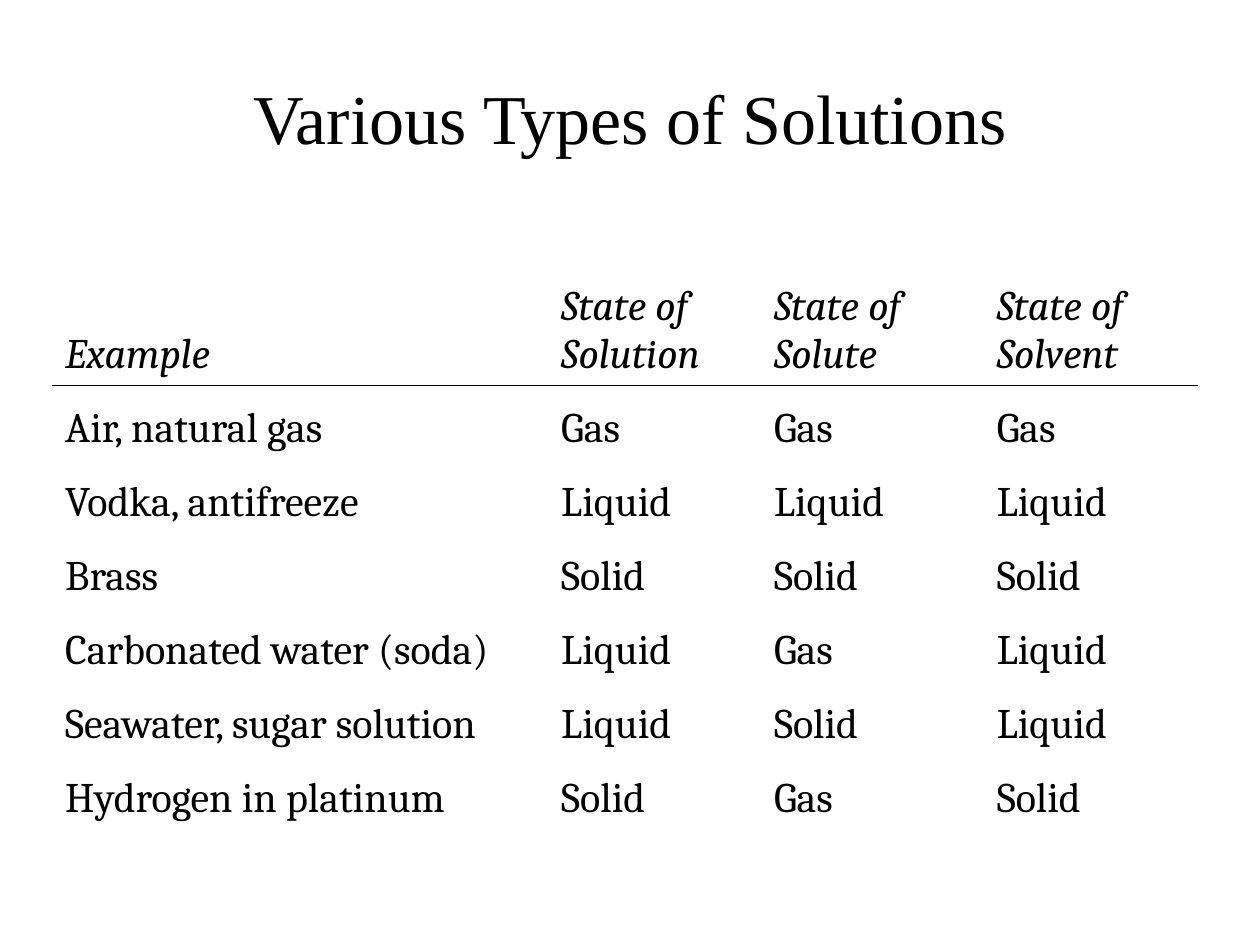
import pptx
import pptx.dml.color
import pptx.enum.text
import pptx.oxml
import pptx.oxml.ns
import pptx.util

Cm = pptx.util.Cm
Pt = pptx.util.Pt
ANCHOR = pptx.enum.text.MSO_ANCHOR
ALIGN = pptx.enum.text.PP_ALIGN

COLORS = {"text": "000000", "rule": "000000"}

SOLUTIONS = [
    ["Example", "State of Solution", "State of Solute", "State of Solvent"],
    ["Air, natural gas", "Gas", "Gas", "Gas"],
    ["Vodka, antifreeze", "Liquid", "Liquid", "Liquid"],
    ["Brass", "Solid", "Solid", "Solid"],
    ["Carbonated water (soda)", "Liquid", "Gas", "Liquid"],
    ["Seawater, sugar solution", "Liquid", "Solid", "Liquid"],
    ["Hydrogen in platinum", "Solid", "Gas", "Solid"],
]


class SlideBuilder:
    title_font = "Times New Roman"
    table_font = "Cambria"
    title_size = 40
    table_size = 24
    rule_width = 1

    def __init__(self, s):
        self.s = s

    def format_runs(self, tf, font, size, italic=False):
        for p in tf.paragraphs:
            for r in p.runs:
                r.font.name = font
                r.font.size = Pt(size)
                r.font.bold = False
                r.font.italic = italic
                r.font.color.rgb = pptx.dml.color.RGBColor.from_string(COLORS["text"])

    def title(self, text, left, top, width, height):
        sp = self.s.shapes.add_textbox(Cm(left), Cm(top), Cm(width), Cm(height))
        tf = sp.text_frame
        tf.word_wrap = True
        tf.vertical_anchor = ANCHOR.MIDDLE
        tf.text = text
        tf.paragraphs[0].alignment = ALIGN.CENTER
        self.format_runs(tf, self.title_font, self.title_size)

    def rule(self, cell, edge):
        ln = pptx.oxml.parse_xml(
            f'<a:{edge} {pptx.oxml.ns.nsdecls("a")} w="{Pt(self.rule_width)}">'
            f'<a:solidFill><a:srgbClr val="{COLORS["rule"]}"/></a:solidFill></a:{edge}>'
        )
        cell._tc.get_or_add_tcPr().insert(0, ln)

    def table(self, rows, left, top, widths, heights):
        frame = self.s.shapes.add_table(
            len(rows), len(widths), Cm(left), Cm(top), Cm(sum(widths)), Cm(sum(heights))
        )
        table = frame.table
        table.first_row = False
        table.horz_banding = False
        for column, width in zip(table.columns, widths):
            column.width = Cm(width)
        for row, height in zip(table.rows, heights):
            row.height = Cm(height)
        for i, values in enumerate(rows):
            for j, value in enumerate(values):
                cell = table.cell(i, j)
                cell.text_frame.text = value
                cell.vertical_anchor = ANCHOR.BOTTOM
                cell.fill.background()
                self.format_runs(cell.text_frame, self.table_font, self.table_size, i == 0)
                if i < 2:
                    self.rule(cell, "lnB" if i == 0 else "lnT")


def main():
    prs = pptx.Presentation()
    prs.slide_width = Cm(25.4)
    prs.slide_height = Cm(19.05)
    builder = SlideBuilder(prs.slides.add_slide(prs.slide_layouts[6]))
    builder.title("Various Types of Solutions", 1.27, 0.76, 22.86, 3.18)
    row_heights = [2.69] + [1.49] * (len(SOLUTIONS) - 1)
    builder.table(SOLUTIONS, 1.06, 5.08, [10, 4.29, 4.49, 4.29], row_heights)
    prs.save("out.pptx")


if __name__ == "__main__":
    main()
